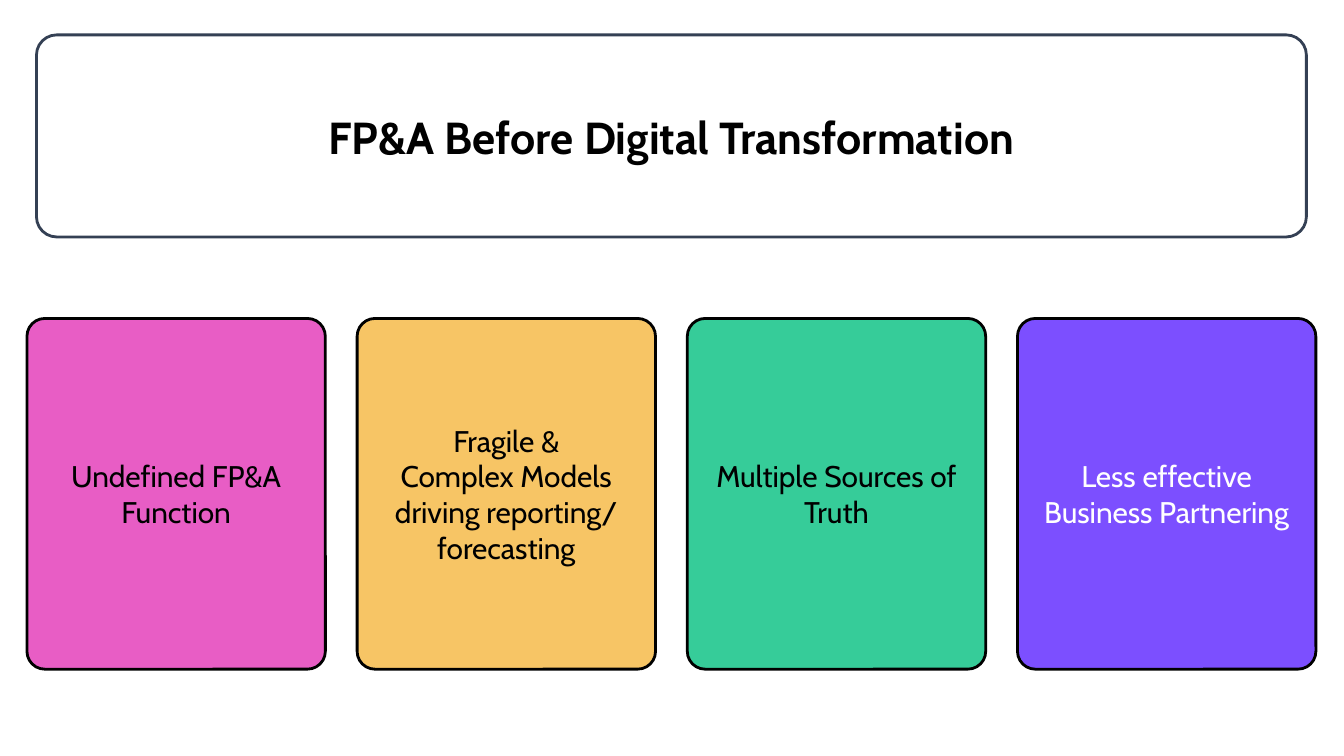
from pptx import Presentation
from pptx.dml.color import RGBColor
from pptx.enum.shapes import MSO_SHAPE
from pptx.enum.text import MSO_ANCHOR, MSO_AUTO_SIZE, PP_ALIGN
from pptx.util import Cm, Pt


def color(code):
    return RGBColor.from_string(code)


class Deck:
    """Hold the style and the current slide."""

    face = "Cabin"
    black = "000000"
    white = "FFFFFF"

    def __init__(self, width, height):
        self.show = Presentation()
        self.show.slide_width = Cm(width)
        self.show.slide_height = Cm(height)
        self.slide = self.show.slides.add_slide(self.show.slide_layouts[5])

    def label(self, shape, text, size, ink, bold=False):
        frame = shape.text_frame
        frame.word_wrap = True
        frame.auto_size = MSO_AUTO_SIZE.NONE
        frame.vertical_anchor = MSO_ANCHOR.MIDDLE
        frame.margin_left = frame.margin_right = Cm(0.25)
        frame.margin_top = frame.margin_bottom = Cm(0.25)
        para = frame.paragraphs[0]
        para.text = text
        para.alignment = PP_ALIGN.CENTER
        font = para.font
        font.name = self.face
        font.size = Pt(size)
        font.bold = bold
        font.color.rgb = color(ink)

    def panel(self, left, top, width, height, fill, line, curve):
        shape = self.slide.shapes.add_shape(
            MSO_SHAPE.ROUNDED_RECTANGLE, Cm(left), Cm(top), Cm(width), Cm(height))
        shape.adjustments[0] = curve
        shape.shadow.inherit = False
        shape.fill.solid()
        shape.fill.fore_color.rgb = color(fill)
        shape.line.color.rgb = color(line)
        shape.line.width = Pt(1.5)
        return shape

    def title(self, text, left, top, width, height):
        shape = self.slide.shapes.title
        shape.left, shape.top = Cm(left), Cm(top)
        shape.width, shape.height = Cm(width), Cm(height)
        self.label(shape, text, 24, self.black, bold=True)
        shape.element.getparent().append(shape.element)

    def card(self, left, text, fill, ink):
        shape = self.panel(left, 6.02, 5.64, 6.63, fill, self.black, 0.06)
        self.label(shape, text, 16, ink)

    def save(self):
        self.show.save("out.pptx")


def main():
    deck = Deck(25.4, 14.29)
    deck.panel(0.69, 0.66, 24, 3.82, deck.white, "344054", 0.1)
    deck.title("FP&A Before Digital Transformation", 3.73, 1.8, 17.91, 1.55)
    cards = [
        ("Undefined FP&A Function", "E85DC5", deck.black),
        ("Fragile &\nComplex Models driving reporting/\nforecasting", "F7C565", deck.black),
        ("Multiple Sources of Truth", "36CC99", deck.black),
        ("Less effective Business Partnering", "7C4FFF", deck.white),
    ]
    for index, (text, fill, ink) in enumerate(cards):
        deck.card(0.51 + index * 6.24, text, fill, ink)
    deck.save()


if __name__ == "__main__":
    main()
